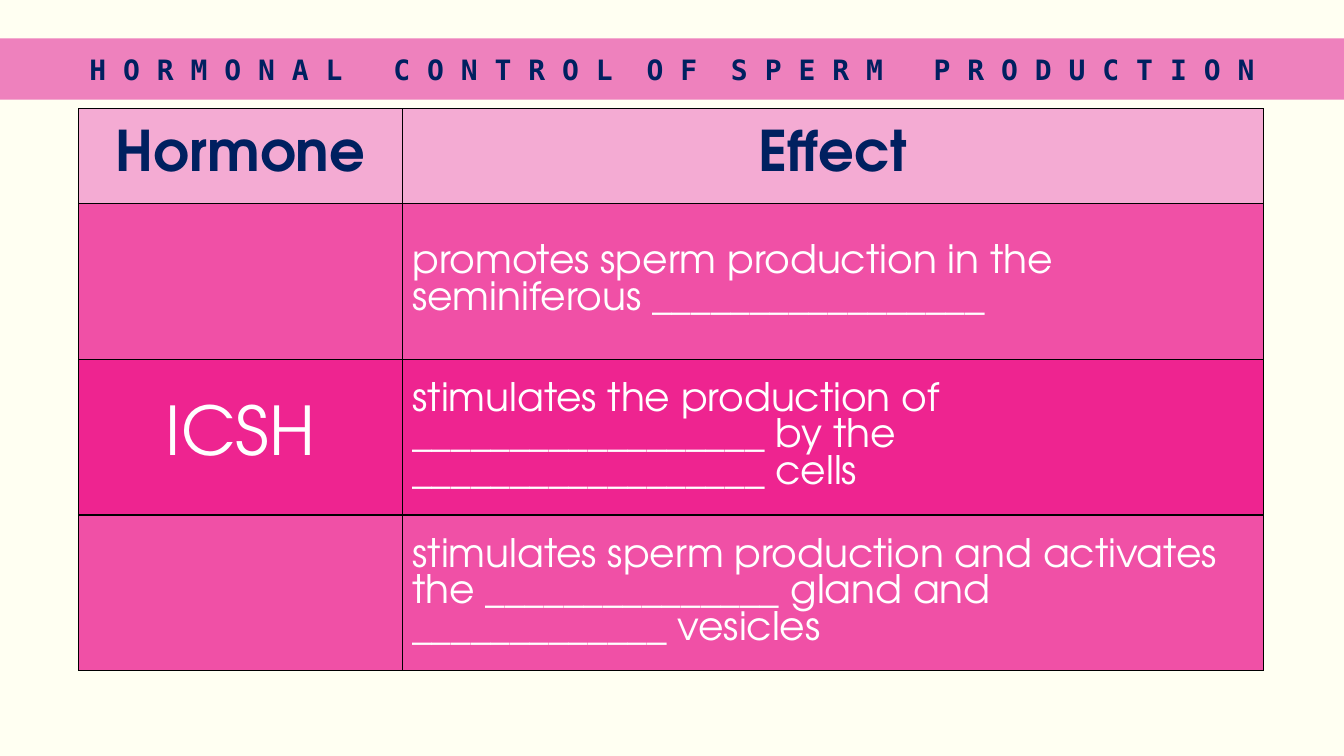
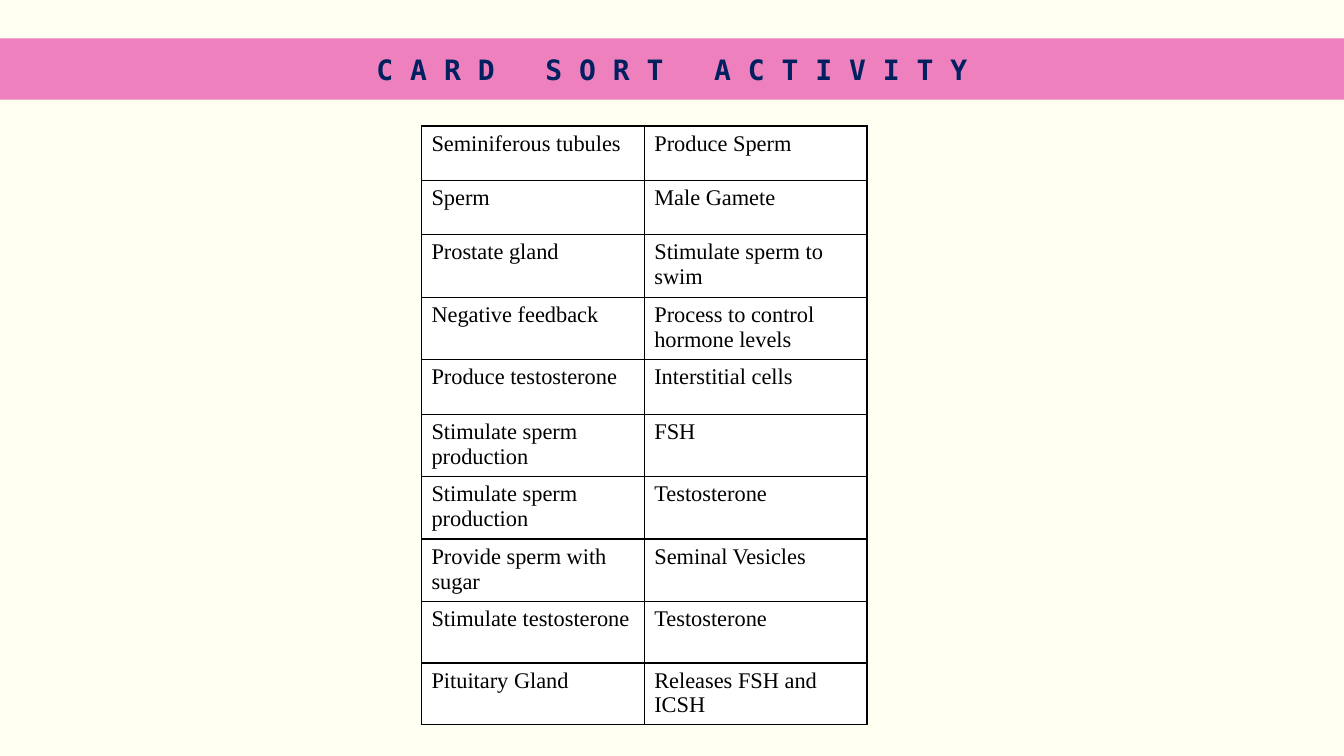
from lxml.etree import SubElement
from pptx import Presentation
from pptx.dml.color import RGBColor
from pptx.enum.shapes import MSO_SHAPE
from pptx.enum.text import MSO_ANCHOR, PP_ALIGN
from pptx.oxml.ns import qn
from pptx.util import Inches, Pt

# Shared look
CREAM, BAND_PINK, NAVY, BLACK, WHITE = "FFFFF2", "EE81BD", "002060", "000000", "FFFFFF"
HEADER_PINK, ROW_PINK, ROW_DEEP = "F4ABD3", "F050A6", "EE2490"
TITLE_FONT, HORMONE_FONT, CARD_FONT = "DejaVu Sans Mono", "TeX Gyre Adventor", "Times New Roman"
TITLE_CHAR = 12  # width in points of one title character

deck = Presentation()
deck.slide_width, deck.slide_height = Inches(13.33), Inches(7.5)


def rgb(hex_string):
    return RGBColor.from_string(hex_string)


def write_cell(cell, text, fill, font, size, color, bold=False, align=PP_ALIGN.LEFT,
               anchor=MSO_ANCHOR.TOP, spacing=None):
    """Fill one table cell, style its text and draw thin black borders."""
    cell.fill.solid()
    cell.fill.fore_color.rgb = rgb(fill)
    cell.vertical_anchor = anchor
    cell.text = text
    paragraph = cell.text_frame.paragraphs[0]
    paragraph.alignment = align
    paragraph.line_spacing = spacing
    paragraph.font.name, paragraph.font.size = font, Pt(size)
    paragraph.font.bold, paragraph.font.color.rgb = bold, rgb(color)
    properties = cell._tc.get_or_add_tcPr()
    for index, side in enumerate(("a:lnL", "a:lnR", "a:lnT", "a:lnB")):
        border = SubElement(properties, qn(side), w=str(Pt(1)))
        properties.insert(index, border)  # borders come before the fill
        SubElement(SubElement(border, qn("a:solidFill")), qn("a:srgbClr"), val=BLACK)


# Content: each title word with the extra characters of space after it
hormone_title = [("HORMONAL", 2), ("CONTROL", 1), ("OF", 1), ("SPERM", 2), ("PRODUCTION", 0)]
hormone_rows = [
    ("Hormone", "Effect"),
    ("", "promotes sperm production in the seminiferous _________________"),
    ("ICSH", "stimulates the production of __________________ by the __________________ cells"),
    ("", "stimulates sperm production and activates the _______________ gland and "
         "_____________ vesicles"),
]
card_title = [("CARD", 2), ("SORT", 2), ("ACTIVITY", 0)]
card_rows = [
    ("Seminiferous tubules", "Produce Sperm"),
    ("Sperm", "Male Gamete"),
    ("Prostate gland", "Stimulate sperm to swim"),
    ("Negative feedback", "Process to control hormone levels"),
    ("Produce testosterone", "Interstitial cells"),
    ("Stimulate sperm production", "FSH"),
    ("Stimulate sperm production", "Testosterone"),
    ("Provide sperm with sugar", "Seminal Vesicles"),
    ("Stimulate testosterone", "Testosterone"),
    ("Pituitary Gland", "Releases FSH and ICSH"),
]
# Title, rows, left and top, column widths, row heights
pages = [
    (hormone_title, hormone_rows, (0.78, 1.08), (3.21, 8.54), [0.94] + [1.545] * 3),
    (card_title, card_rows, (4.18, 1.25), (2.21, 2.21),
     [0.54, 0.54, 0.62, 0.62, 0.54, 0.62, 0.62, 0.62, 0.61, 0.61]),
]

# Background, title band and table grid of every slide
tables = []
for title, rows, (left, top), widths, heights in pages:
    slide = deck.slides.add_slide(deck.slide_layouts[6])
    slide.background.fill.solid()
    slide.background.fill.fore_color.rgb = rgb(CREAM)

    band = slide.shapes.add_shape(MSO_SHAPE.RECTANGLE, 0, Inches(0.38),
                                  deck.slide_width, Inches(0.61))
    band.shadow.inherit = False
    band.fill.solid()
    band.fill.fore_color.rgb = rgb(BAND_PINK)
    band.line.fill.background()
    band.text_frame.word_wrap = True
    band.text_frame.vertical_anchor = MSO_ANCHOR.MIDDLE
    heading = band.text_frame.paragraphs[0]
    heading.alignment = PP_ALIGN.CENTER
    heading.font.name, heading.font.size = TITLE_FONT, Pt(20)
    heading.font.bold, heading.font.color.rgb = True, rgb(NAVY)
    for word, extra in title:
        heading.add_run().text = " ".join(word)
        if extra:
            gap = heading.add_run()
            gap.text = " "
            gap._r.get_or_add_rPr().set("spc", str(extra * TITLE_CHAR * 100))

    table = slide.shapes.add_table(len(rows), len(widths), Inches(left), Inches(top),
                                   Inches(sum(widths)), Inches(sum(heights))).table
    table.first_row = table.horz_banding = False
    for column, width in zip(table.columns, widths):
        column.width = Inches(width)
    for row, height in zip(table.rows, heights):
        row.height = Inches(height)
    tables.append(table)

hormone_table, card_table = tables

# Hormones and their effects
for r, cells in enumerate(hormone_rows):
    for c, text in enumerate(cells):
        header = r == 0
        write_cell(hormone_table.cell(r, c), text,
                   HEADER_PINK if header else ROW_DEEP if r == 2 else ROW_PINK,
                   HORMONE_FONT, 40 if header else (48, 28)[c],
                   NAVY if header else WHITE, bold=header,
                   align=PP_ALIGN.CENTER if header or c == 0 else PP_ALIGN.LEFT,
                   anchor=MSO_ANCHOR.MIDDLE)

# Cards to sort
for r, cells in enumerate(card_rows):
    for c, text in enumerate(cells):
        write_cell(card_table.cell(r, c), text, WHITE, CARD_FONT, 16, BLACK)

deck.save("out.pptx")
